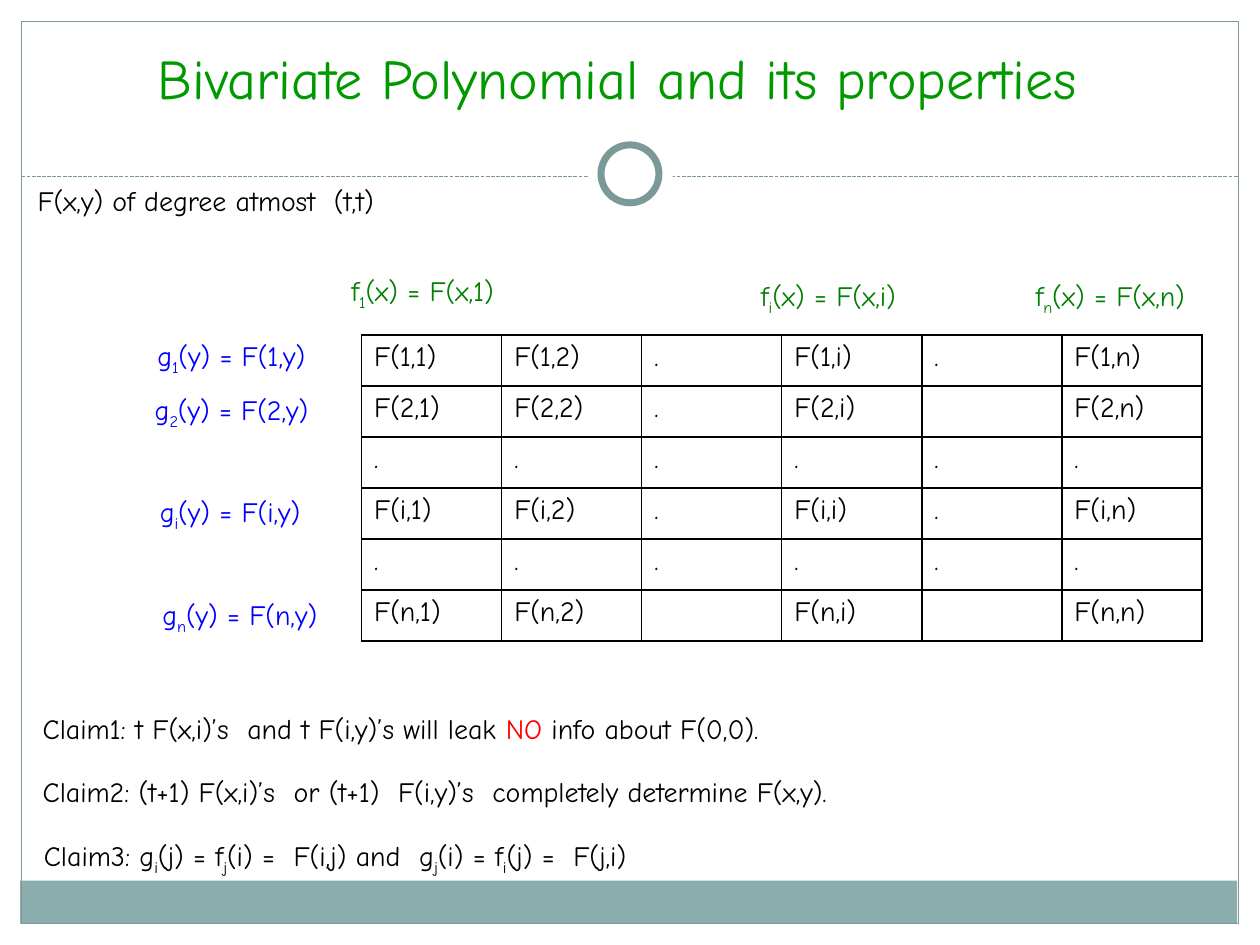
"""Build the slide on bivariate polynomials and their properties."""
from lxml import etree
from pptx import Presentation
from pptx.dml.color import RGBColor
from pptx.enum.dml import MSO_LINE
from pptx.enum.shapes import MSO_CONNECTOR, MSO_SHAPE
from pptx.enum.text import MSO_ANCHOR, MSO_AUTO_SIZE, PP_ALIGN
from pptx.oxml import parse_xml
from pptx.oxml.ns import nsdecls, qn
from pptx.util import Inches, Pt

RECTANGLE, OVAL = MSO_SHAPE.RECTANGLE, MSO_SHAPE.OVAL
STRAIGHT, DASHED = MSO_CONNECTOR.STRAIGHT, MSO_LINE.SQUARE_DOT
CENTER, MIDDLE, GROW = PP_ALIGN.CENTER, MSO_ANCHOR.MIDDLE, MSO_AUTO_SIZE.SHAPE_TO_FIT_TEXT

THEME = {
    "font": "Comic Neue", "title_size": 32, "body_size": 16,
    "title": "009900", "text": "000000", "row": "0000FF", "column": "008000",
    "alert": "FF0000", "paper": "FFFFFF", "bar": "8CADAE", "frame": "7C999A",
}

TITLE = "Bivariate Polynomial and its properties"
TITLE_BOX = (0, 0.26, 9.81, 0.7)

PANELS = [
    (RECTANGLE, (0, 0, 10, 1.52), "paper", None),
    (RECTANGLE, (0, 0, 0.17, 7.5), "paper", None),
    (RECTANGLE, (9.83, 0, 0.17, 7.5), "paper", None),
    (RECTANGLE, (0.16, 6.99, 9.66, 0.34), "bar", None),
    (RECTANGLE, (0.17, 0.17, 9.66, 7.16), None, 0.75),
]
RINGS = [
    (OVAL, (4.67, 1.05, 0.67, 0.67), "paper", None),
    (OVAL, (4.77, 1.15, 0.46, 0.46), "paper", 4),
]
DIVIDER = (0.17, 1.4, 9.83, 1.4)

TABLE_BOX = (2.87, 2.66, 6.67, 2.43)
VALUES = [
    ["F(1,1)", "F(1,2)", ".", "F(1,i)", ".", "F(1,n)"],
    ["F(2,1)", "F(2,2)", ".", "F(2,i)", "", "F(2,n)"],
    ["."] * 6,
    ["F(i,1)", "F(i,2)", ".", "F(i,i)", ".", "F(i,n)"],
    ["."] * 6,
    ["F(n,1)", "F(n,2)", "", "F(n,i)", "", "F(n,n)"],
]

SUBSCRIPT = {"baseline": "-25000"}
ALERT = {"color": "alert"}
LABEL_HEIGHT = 0.37
LABELS = [
    ("F(x,y) of degree atmost  (t,t)", (0.2, 1.41, 3.34), "text", False, {}),
    ("g|1|(y) = F(1,y)", (1.15, 2.64, 1.5), "row", False, SUBSCRIPT),
    ("g|2|(y) = F(2,y)", (1.13, 3.07, 1.56), "row", False, SUBSCRIPT),
    ("g|i|(y) = F(i,y)", (1.17, 3.88, 1.44), "row", False, SUBSCRIPT),
    ("g|n|(y) = F(n,y)", (1.19, 4.69, 1.53), "row", False, SUBSCRIPT),
    ("f|1|(x) = F(x,1)", (2.69, 2.12, 1.52), "column", False, SUBSCRIPT),
    ("f|i|(x) = F(x,i)", (5.94, 2.16, 1.46), "column", False, SUBSCRIPT),
    ("f|n|(x) = F(x,n)", (8.12, 2.16, 1.55), "column", False, SUBSCRIPT),
    ("Claim1: t F(x,i)’s  and t F(i,y)’s will leak |NO| info about F(0,0).",
     (0.24, 5.6, 6.61), "text", True, ALERT),
    ("Claim2: (t+1) F(x,i)’s  or (t+1)  F(i,y)’s  completely determine F(x,y).",
     (0.24, 6.1, 9.02), "text", True, {}),
    ("Claim3: g|i|(j) = f|j|(i) =  F(i,j) and  g|j|(i) = f|i|(j) =  F(j,i)",
     (0.25, 6.61, 9.02), "text", True, SUBSCRIPT),
]


def color(name):
    return RGBColor.from_string(THEME[name])


def inches(values):
    return [Inches(value) for value in values]


def apply(target, formats):
    for name, value in formats.items():
        setattr(target, name, value)


def write(paragraph, text, color_name, size="body_size", accent=None):
    """Add text to a paragraph, giving the accent to parts between bars."""
    for index, part in enumerate(text.split("|")):
        style = accent if accent and index % 2 else {}
        run = paragraph.add_run()
        run.text = part
        apply(run.font, {"name": THEME["font"], "size": Pt(THEME[size])})
        run.font.color.rgb = color(style.get("color", color_name))
        if "baseline" in style:
            run.font._element.set("baseline", style["baseline"])


def add_panel(slide, kind, box, fill, line_width):
    shape = slide.shapes.add_shape(kind, *inches(box))
    shape.shadow.inherit = False
    if fill:
        shape.fill.solid()
        shape.fill.fore_color.rgb = color(fill)
    else:
        shape.fill.background()
    if line_width:
        shape.line.color.rgb = color("frame")
        shape.line.width = Pt(line_width)
    else:
        shape.line.fill.background()


def add_divider(slide):
    connector = slide.shapes.add_connector(STRAIGHT, *inches(DIVIDER))
    connector.line.color.rgb = color("frame")
    apply(connector.line, {"width": Pt(0.75), "dash_style": DASHED})
    etree.SubElement(connector._element.spPr, qn("a:effectLst"))


def add_title(slide):
    title = slide.shapes.title
    title.element.getparent().append(title.element)
    apply(title, dict(zip(("left", "top", "width", "height"), inches(TITLE_BOX))))
    apply(title.text_frame, {"vertical_anchor": MIDDLE, "word_wrap": True})
    paragraph = title.text_frame.paragraphs[0]
    paragraph.alignment = CENTER
    write(paragraph, TITLE, "title", "title_size")


def add_label(slide, text, place, color_name, wrap, accent):
    shape = slide.shapes.add_textbox(*inches((*place, LABEL_HEIGHT)))
    apply(shape.text_frame, {"word_wrap": wrap, "auto_size": GROW})
    write(shape.text_frame.paragraphs[0], text, color_name, accent=accent)


def add_borders(cell):
    properties = cell._tc.get_or_add_tcPr()
    for index, side in enumerate("LRTB"):
        properties.insert(index, parse_xml(
            f'<a:ln{side} {nsdecls("a")} w="{Pt(1)}"><a:solidFill>'
            f'<a:srgbClr val="{THEME["text"]}"/></a:solidFill></a:ln{side}>'))


def add_values(slide):
    row_count, column_count = len(VALUES), len(VALUES[0])
    table = slide.shapes.add_table(row_count, column_count, *inches(TABLE_BOX)).table
    apply(table, {"first_row": False, "horz_banding": False})
    for column in table.columns:
        column.width = Inches(TABLE_BOX[2] / column_count)
    for row, texts in zip(table.rows, VALUES):
        row.height = Inches(TABLE_BOX[3] / row_count)
        for cell, text in zip(row.cells, texts):
            cell.fill.background()
            add_borders(cell)
            write(cell.text_frame.paragraphs[0], text, "text")


def main():
    presentation = Presentation()
    apply(presentation, {"slide_width": Inches(10), "slide_height": Inches(7.5)})
    slide = presentation.slides.add_slide(presentation.slide_layouts[5])
    for panel in PANELS:
        add_panel(slide, *panel)
    add_divider(slide)
    for ring in RINGS:
        add_panel(slide, *ring)
    add_title(slide)
    add_values(slide)
    for label in LABELS:
        add_label(slide, *label)
    presentation.save("out.pptx")


if __name__ == "__main__":
    main()
